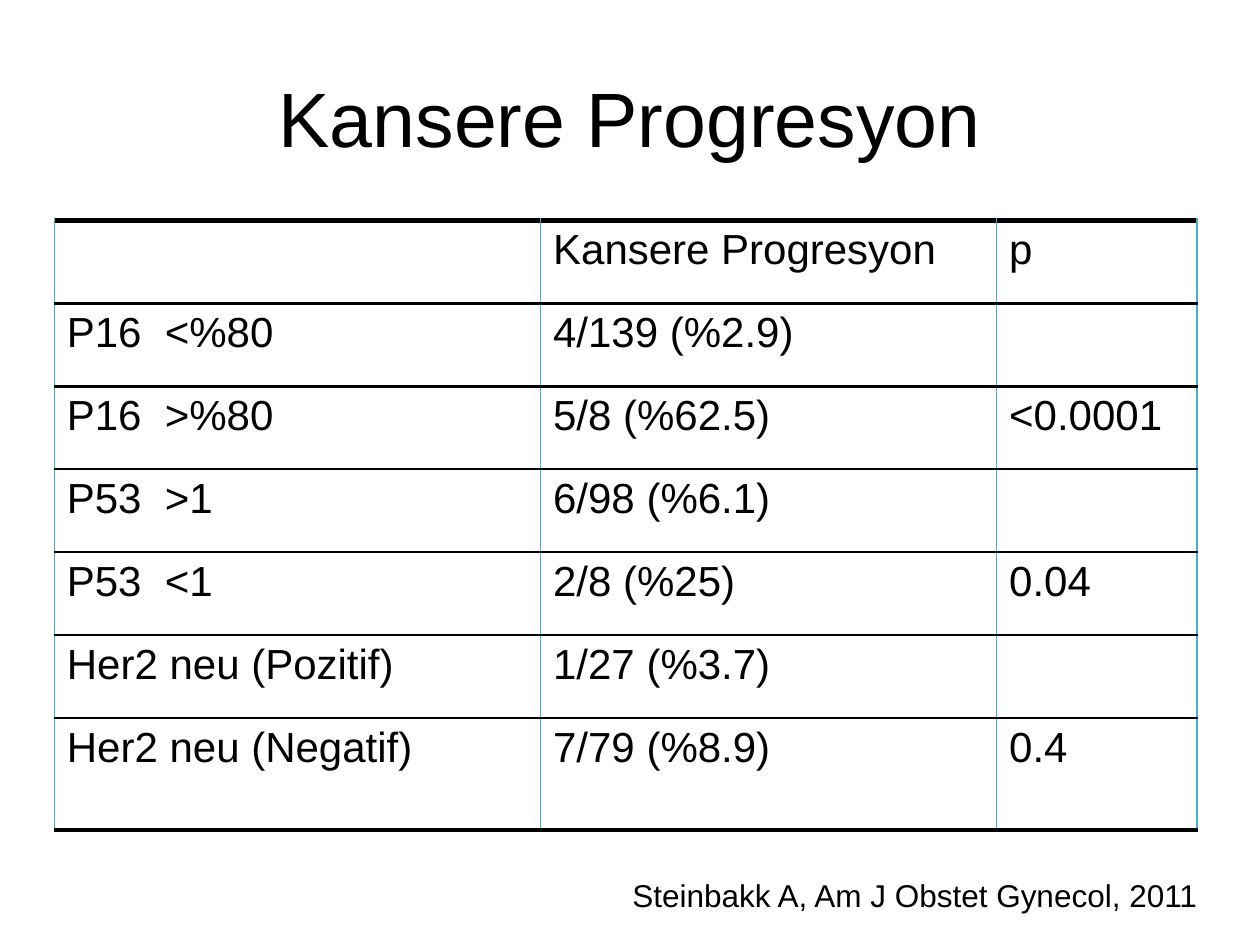
from lxml import etree
from pptx import Presentation
from pptx import util as u
from pptx.dml import color
from pptx.enum import text as t
from pptx.oxml import ns


def rgb(value):
    return color.RGBColor.from_string(value)


def write(frame, content, size=24, align=t.PP_ALIGN.LEFT, anchor=t.MSO_ANCHOR.TOP):
    frame.vertical_anchor = anchor
    paragraph = frame.paragraphs[0]
    paragraph.alignment = align
    run = paragraph.add_run()
    run.text = content
    run.font.name = "Arial"
    run.font.size = u.Pt(size)
    run.font.color.rgb = rgb("000000")


presentation = Presentation()
presentation.slide_width = u.Pt(720)
presentation.slide_height = u.Pt(540)
slide = presentation.slides.add_slide(presentation.slide_layouts[5])

title = slide.shapes.title
title.left, title.top, title.width, title.height = u.Pt(36), u.Pt(21.6), u.Pt(648), u.Pt(90)
write(title.text_frame, "Kansere Progresyon", size=44, align=t.PP_ALIGN.CENTER, anchor=t.MSO_ANCHOR.MIDDLE)

rows = [
    ("", "Kansere Progresyon", "p"),
    ("P16  <%80", "4/139 (%2.9)", ""),
    ("P16  >%80", "5/8 (%62.5)", "<0.0001"),
    ("P53  >1", "6/98 (%6.1)", ""),
    ("P53  <1", "2/8 (%25)", "0.04"),
    ("Her2 neu (Pozitif)", "1/27 (%3.7)", ""),
    ("Her2 neu (Negatif)", "7/79 (%8.9)", "0.4"),
]
column_widths = [277.9, 260.6, 114.5]
row_heights = [47.4] * 6 + [64]

table = slide.shapes.add_table(
    len(rows), len(column_widths), u.Pt(31), u.Pt(126), u.Pt(sum(column_widths)), u.Pt(sum(row_heights))
).table
table.first_row = False
table.horz_banding = False
for column, width in zip(table.columns, column_widths):
    column.width = u.Pt(width)

for row_index, values in enumerate(rows):
    table.rows[row_index].height = u.Pt(row_heights[row_index])
    top = 3 if row_index == 0 else 1.5
    bottom = 3 if row_index == len(rows) - 1 else 1.5
    borders = [("lnL", "4BACC6", 1), ("lnR", "4BACC6", 1), ("lnT", "000000", top), ("lnB", "000000", bottom)]
    for column_index, value in enumerate(values):
        cell = table.cell(row_index, column_index)
        properties = cell._tc.get_or_add_tcPr()
        for side, line_color, width in borders:
            line = etree.SubElement(properties, ns.qn(f"a:{side}"), w=str(u.Pt(width)))
            fill = etree.SubElement(line, ns.qn("a:solidFill"))
            etree.SubElement(fill, ns.qn("a:srgbClr"), val=line_color)
        cell.fill.background()
        if value:
            write(cell.text_frame, value)

citation = slide.shapes.add_textbox(u.Pt(354.3), u.Pt(496.8), u.Pt(340.5), u.Pt(29))
citation.text_frame.word_wrap = False
citation.text_frame.auto_size = t.MSO_AUTO_SIZE.SHAPE_TO_FIT_TEXT
write(citation.text_frame, "Steinbakk A, Am J Obstet Gynecol, 2011", size=18)

presentation.save("out.pptx")
